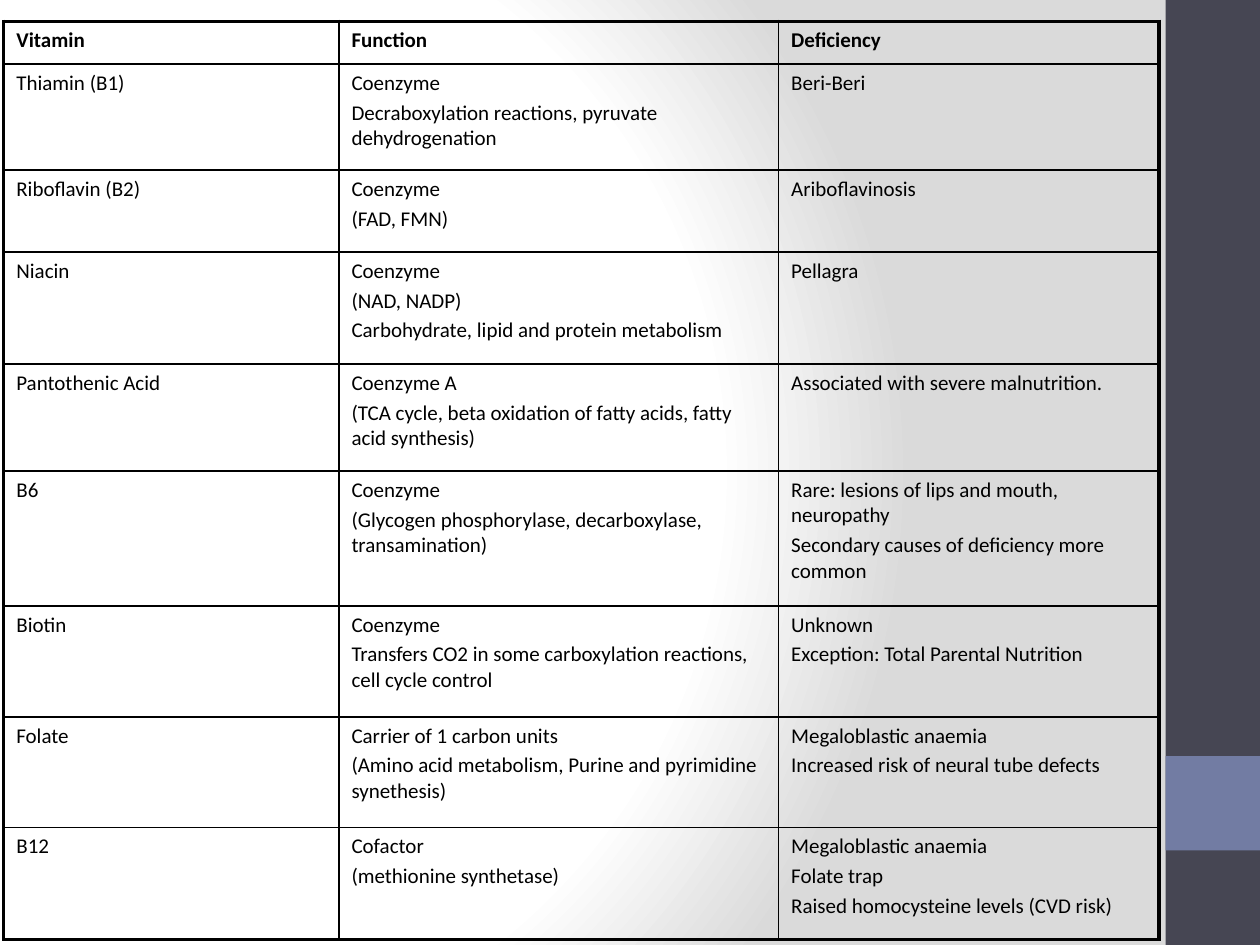
import pptx
import pptx.util
import pptx.oxml
import pptx.oxml.ns
import pptx.dml.color
import pptx.enum.shapes

INCH = pptx.util.Inches
NS = 'xmlns:a="http://schemas.openxmlformats.org/drawingml/2006/main"'
WIDE, HIGH = 10, 7.5
BLACK, WHITE, GREY = "000000", "FFFFFF", "DADADA"
SLATE, BLUE = "464653", "727CA3"
THICK, THIN = 2.25, 1


def tint(code):
    return pptx.dml.color.RGBColor.from_string(code)


def write(frame, text, size=12, font="Calibri", color=BLACK, bold=False, gap=0.2):
    frame.text = text
    for para in frame.paragraphs:
        para.space_before = pptx.util.Pt(size * gap)
        para.font.size = pptx.util.Pt(size)
        para.font.name = font
        para.font.bold = bold
        para.font.color.rgb = tint(color)


deck = pptx.Presentation()
deck.slide_width, deck.slide_height = INCH(WIDE), INCH(HIGH)
slide = deck.slides.add_slide(deck.slide_layouts[6])

# Background: white fading to grey on the right
slide.background.fill.solid()
solid = slide.element.find(".//" + pptx.oxml.ns.qn("a:solidFill"))
stops = "".join(
    f'<a:gs pos="{share * 1000}"><a:srgbClr val="{code}"/></a:gs>'
    for share, code in [(0, WHITE), (75, WHITE), (100, GREY)])
fade = pptx.oxml.parse_xml(
    f'<a:gradFill {NS} rotWithShape="1"><a:gsLst>{stops}</a:gsLst>'
    '<a:path path="circle">'
    '<a:fillToRect l="20000" t="50000" r="100000" b="50000"/>'
    '</a:path></a:gradFill>')
solid.getparent().replace(solid, fade)

# Side band, a tenth of the height wide, with a square accent block
side = HIGH / 10
for top, tall, code in [(0, HIGH, SLATE), (8 * side, side, BLUE)]:
    bar = slide.shapes.add_shape(
        pptx.enum.shapes.MSO_SHAPE.RECTANGLE,
        INCH(WIDE - side), INCH(top), INCH(side), INCH(tall))
    bar.shadow.inherit = False
    bar.fill.solid()
    bar.fill.fore_color.rgb = tint(code)
    bar.line.fill.background()

# Table rows: height, then vitamin, function and deficiency
rows = [
    (0.34, "Vitamin", "Function", "Deficiency"),
    (0.84, "Thiamin (B1)",
     "Coenzyme\nDecraboxylation reactions, pyruvate dehydrogenation",
     "Beri-Beri"),
    (0.65, "Riboflavin (B2)", "Coenzyme\n(FAD, FMN)", "Ariboflavinosis"),
    (0.89, "Niacin",
     "Coenzyme\n(NAD, NADP)\nCarbohydrate, lipid and protein metabolism",
     "Pellagra"),
    (0.85, "Pantothenic Acid",
     "Coenzyme A\n(TCA cycle, beta oxidation of fatty acids, fatty acid synthesis)",
     "Associated with severe malnutrition."),
    (1.07, "B6",
     "Coenzyme\n(Glycogen phosphorylase, decarboxylase, transamination)",
     "Rare: lesions of lips and mouth, neuropathy\n"
     "Secondary causes of deficiency more common"),
    (0.88, "Biotin",
     "Coenzyme\nTransfers CO2 in some carboxylation reactions, cell cycle control",
     "Unknown\nException: Total Parental Nutrition"),
    (0.88, "Folate",
     "Carrier of 1 carbon units\n"
     "(Amino acid metabolism, Purine and pyrimidine synethesis)",
     "Megaloblastic anaemia\nIncreased risk of neural tube defects"),
    (0.89, "B12",
     "Cofactor\n(methionine synthetase)",
     "Megaloblastic anaemia\nFolate trap\nRaised homocysteine levels (CVD risk)"),
]
cols = [2.66, 3.49, 3.02]

# Table grid
table = slide.shapes.add_table(
    len(rows), len(cols), INCH(0.03), INCH(0.17),
    INCH(sum(cols)), INCH(sum(row[0] for row in rows))).table
table.first_row = table.horz_banding = False
for col, width in zip(table.columns, cols):
    col.width = INCH(width)

# Cells: thick lines on the outer edge, thin lines within
for r, (height, *texts) in enumerate(rows):
    table.rows[r].height = INCH(height)
    for c, text in enumerate(texts):
        cell = table.cell(r, c)
        write(cell.text_frame, text, bold=r == 0)
        cell.fill.background()
        outer = {"L": c == 0, "R": c == len(cols) - 1,
                 "T": r == 0, "B": r == len(rows) - 1}
        props = cell._tc.get_or_add_tcPr()
        for spot, edge in enumerate(outer):
            weight = pptx.util.Pt(THICK if outer[edge] else THIN)
            line = pptx.oxml.parse_xml(
                f'<a:ln{edge} {NS} w="{weight}"><a:solidFill>'
                f'<a:srgbClr val="{BLACK}"/></a:solidFill></a:ln{edge}>')
            props.insert(spot, line)

deck.save("out.pptx")
